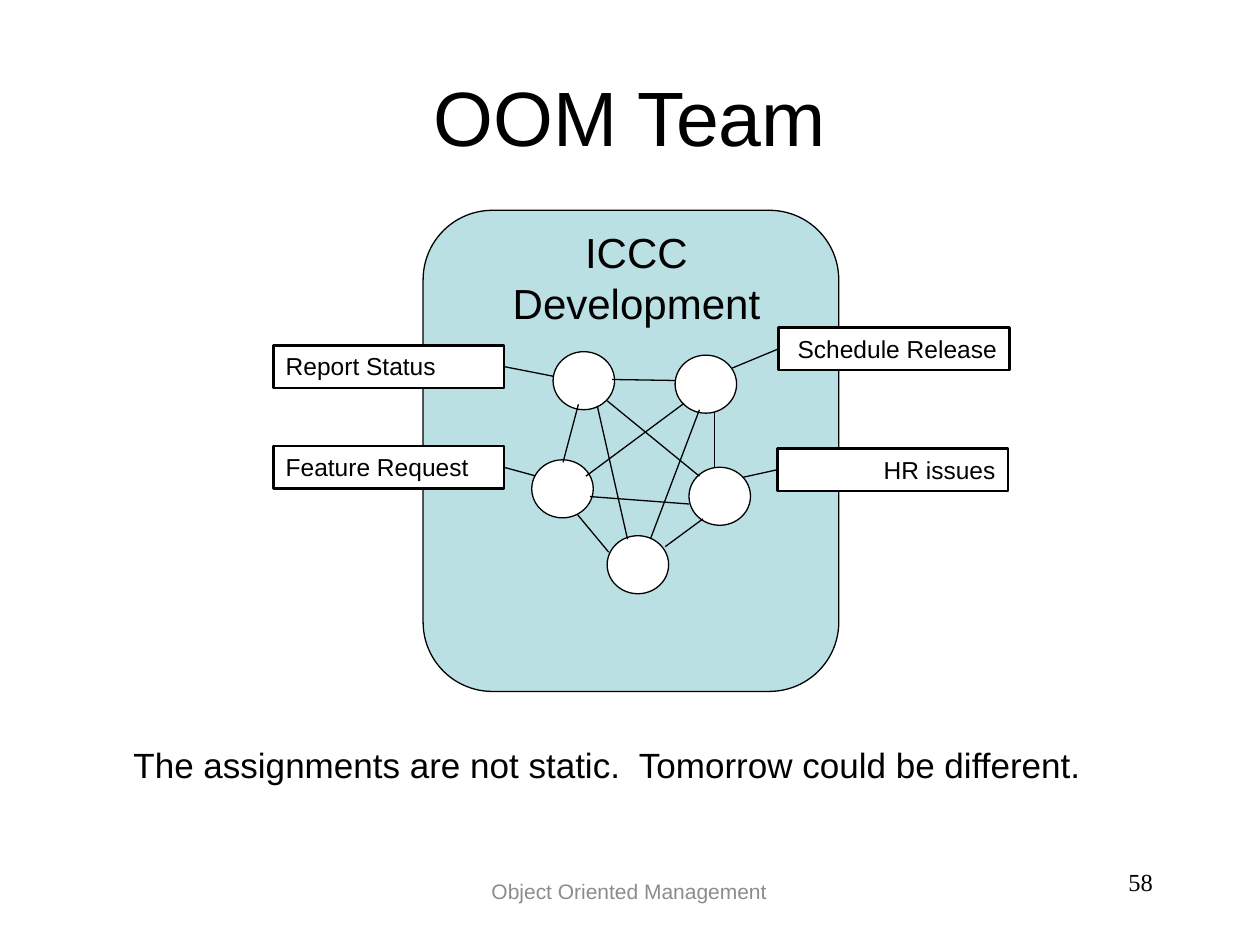
from dataclasses import dataclass

from pptx import Presentation
from pptx.dml.color import RGBColor
from pptx.enum.shapes import MSO_CONNECTOR as Line, MSO_SHAPE as Preset
from pptx.enum.text import MSO_ANCHOR as Anchor, PP_ALIGN as Align
from pptx.oxml.ns import qn
from pptx.util import Cm, Pt


@dataclass(frozen=True)
class Theme:
    ink: str = "000000"
    muted: str = "8C8C8C"
    panel: str = "BBE0E3"
    paper: str = "FFFFFF"
    sans: str = "Arial"
    serif: str = "Times New Roman"
    title: int = 44
    heading: int = 24
    note: int = 20
    label: int = 14
    footer: int = 12
    thin: float = 0.75
    bold: float = 1.5


class SlideBuilder:
    def __init__(self, slide, theme):
        self.shapes = slide.shapes
        self.theme = theme

    def add_words(self, frame, words, size, align, anchor=Anchor.TOP, color=None, font=None):
        frame.word_wrap = True
        frame.vertical_anchor = anchor
        paragraph = frame.paragraphs[0]
        paragraph.alignment = align
        run = paragraph.add_run()
        run.text = words
        run.font.size = Pt(size)
        run.font.name = font or self.theme.sans
        run.font.color.rgb = RGBColor.from_string(color or self.theme.ink)

    def text(self, box, words, size, align=Align.CENTER, **style):
        area = self.shapes.add_textbox(*map(Cm, box))
        self.add_words(area.text_frame, words, size, align, **style)

    def shape(self, preset, box, fill, width):
        part = self.shapes.add_shape(preset, *map(Cm, box))
        part.shadow.inherit = False
        part.fill.solid()
        part.fill.fore_color.rgb = RGBColor.from_string(fill)
        part.line.color.rgb = RGBColor.from_string(self.theme.ink)
        part.line.width = Pt(width)
        return part

    def label(self, box, words, align):
        part = self.shape(Preset.RECTANGLE, box, self.theme.paper, self.theme.bold)
        self.add_words(part.text_frame, words, self.theme.label, align)
        return part

    def line(self, start, end):
        link = self.shapes.add_connector(Line.STRAIGHT, *map(Cm, start + end))
        link.line.color.rgb = RGBColor.from_string(self.theme.ink)
        link.line.width = Pt(self.theme.thin)
        properties = link._element.spPr
        properties.append(properties.makeelement(qn("a:effectLst"), {}))
        return link


LABEL_SIZE = (4.65, 0.86)
MEMBER_SIZE = (1.24, 1.17)
LEFT_SIDE, RIGHT_SIDE = 1, 3

# Assignment, label corner, text alignment, joined side, line end at the member
ASSIGNMENTS = [
    ("Report Status", (5.51, 6.96), Align.LEFT, RIGHT_SIDE, (11.18, 7.59)),
    ("Feature Request", (5.51, 8.99), Align.LEFT, RIGHT_SIDE, (10.82, 9.6)),
    ("Schedule Release", (15.7, 6.6), Align.RIGHT, LEFT_SIDE, (14.76, 7.42)),
    ("HR issues", (15.67, 9.04), Align.RIGHT, LEFT_SIDE, (14.94, 9.63)),
]
MEMBERS = [(11.15, 7.09), (10.72, 9.27), (13.89, 9.42), (13.61, 7.16), (12.24, 10.8)]

# Every member is linked to every other one
MEMBER_LINKS = [
    ((11.66, 8.15), (11.35, 9.32)),
    ((12.04, 8.18), (12.65, 10.87)),
    ((12.24, 8.08), (14.1, 9.6)),
    ((12.34, 7.65), (13.61, 7.67)),
    ((11.63, 10.36), (12.27, 11.13)),
    ((13.41, 11.02), (14.17, 10.46)),
    ((14.4, 9.42), (14.4, 8.31)),
    ((11.81, 9.6), (13.79, 8.13)),
    ((11.89, 10.01), (13.89, 10.16)),
    ((14.1, 8.26), (13.11, 10.87)),
]


def main():
    deck = Presentation()
    deck.slide_width, deck.slide_height = Cm(25.4), Cm(19.05)
    theme = Theme()
    team = SlideBuilder(deck.slides.add_slide(deck.slide_layouts[6]), theme)

    # Title and closing note
    team.text((1.9, 1.27, 21.6, 2.11), "OOM Team", theme.title, anchor=Anchor.MIDDLE)
    team.text((1.12, 14.86, 22.25, 2.06),
              "The assignments are not static.  Tomorrow could be different.", theme.note)

    # Development panel
    panel = team.shape(Preset.ROUNDED_RECTANGLE, (8.53, 4.24, 8.38, 9.7),
                       theme.panel, theme.thin)
    panel.adjustments[0] = 0.167
    team.text((9.13, 4.45, 7.4, 2.29), "ICCC Development", theme.heading)

    # Assignments, each joined to its member
    for words, corner, align, side, member_edge in ASSIGNMENTS:
        label = team.label(corner + LABEL_SIZE, words, align)
        team.line(corner, member_edge).begin_connect(label, side)

    # Team members and their links
    for corner in MEMBERS:
        team.shape(Preset.OVAL, corner + MEMBER_SIZE, theme.paper, theme.thin)
    for start, end in MEMBER_LINKS:
        team.line(start, end)

    # Footer and page number
    team.text((7.49, 17.35, 10.39, 1.24), "Object Oriented Management", theme.footer,
              anchor=Anchor.MIDDLE, color=theme.muted)
    team.text((18.21, 17.35, 5.28, 1.24), "58", theme.label, Align.RIGHT, font=theme.serif)

    deck.save("out.pptx")


if __name__ == "__main__":
    main()
